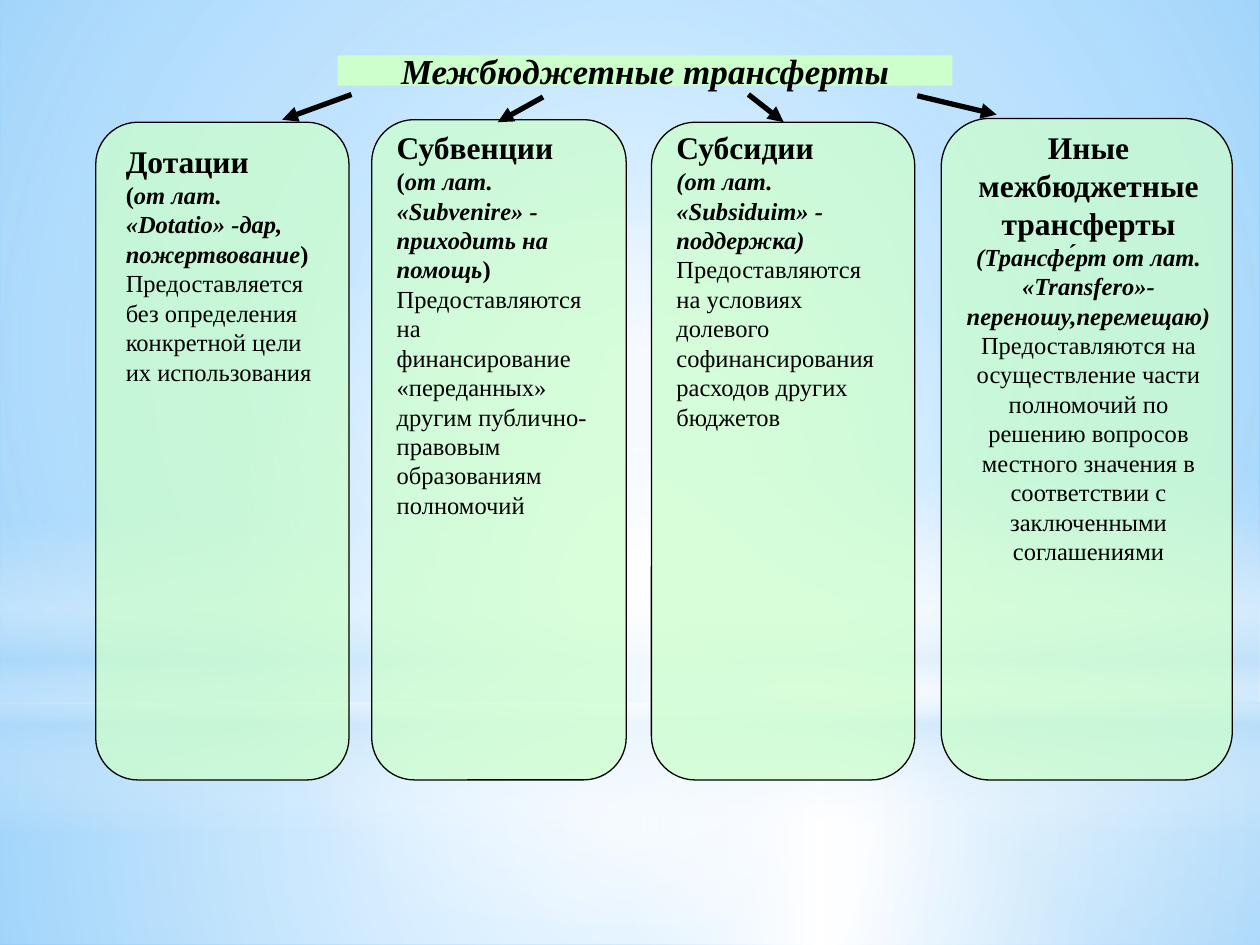
import pptx
import pptx.util
import pptx.dml.color
import pptx.enum.shapes
import pptx.enum.text
import pptx.oxml
import pptx.oxml.ns
import lxml.etree

COLS, ROWS = 100, 75  # grid over the slide
CELL = pptx.util.Inches(0.1)
FACE = "Times New Roman"
INK = {"white": "FFFFFF", "black": "000000", "mint": "CCFFCC", "sky": "9ED5FF",
       "deep": "5BB9FF", "pale": "B4DCFA"}
KIND = pptx.enum.shapes.MSO_SHAPE
ALIGN = pptx.enum.text.PP_ALIGN
qn = pptx.oxml.ns.qn

# Run formats
HEAD = {"size": pptx.util.Pt(18), "bold": True, "italic": False}
TERM = {"size": pptx.util.Pt(14), "bold": True, "italic": True}
MARK = {**TERM, "italic": False}
BODY = {**MARK, "bold": False}
GAP = {**BODY, "size": pptx.util.Pt(9), "name": "Arial"}
TITLE = {**TERM, "size": pptx.util.Pt(20)}

MID = (50, 50, 50, 50)

# Background layers: kind, box, stops (place, colour, opacity), centre or None
LAYERS = [
    (KIND.RECTANGLE, (0, 55.8, COLS, 19.2),
     [(0, "white", 91), (37, "white", 76), (100, "pale", 79)], MID),
    (KIND.RECTANGLE, (0, 0, COLS, 55.8),
     [(0, "white", 89), (48, "white", 62), (100, "pale", 79)], MID),
    (KIND.RECTANGLE, (0, 41.2, COLS, 25),
     [(0, "white", 0), (29, "white", 30), (45, "pale", 40), (55, "white", 26),
      (65, "pale", 60), (100, "white", 0)], None),
    (KIND.OVAL, (0, 17.5, COLS, 55.8), [(0, "white", 100), (56, "white", 0)], MID),
]

# Cards: box, opacity, text box, alignment, paragraphs of runs
CARDS = [
    ((7.6, 9.7, 20.1, 52.2), 74, (9, 10.8, 17.3, 20.5), ALIGN.LEFT, [
        [("Дотации", HEAD)],
        [("(", MARK), ("от лат. «Dotatio» -дар, пожертвование", TERM), (")", MARK)],
        [("Предоставляется без определения конкретной цели их использования", BODY)]]),
    ((29.5, 9.5, 20.2, 52.4), 72, (30.5, 9.7, 18.1, 32.3), ALIGN.LEFT, [
        [("Субвенции", HEAD)],
        [("(", MARK), ("от лат. «Subvenire» - приходить на помощь", TERM), (")", MARK)],
        [("Предоставляются на финансирование «переданных» другим "
          "публично-правовым образованиям полномочий", BODY)]]),
    ((51.7, 9.7, 20.9, 52.2), 74, (52.7, 9.7, 18.9, 25.2), ALIGN.LEFT, [
        [("Субсидии", HEAD)],
        [("(от лат. «Subsiduim» - поддержка)", TERM)],
        [("Предоставляются на условиях долевого софинансирования "
          "расходов других бюджетов", BODY)]]),
    ((74.7, 9.4, 23.1, 52.5), 72, (75.6, 9.7, 21.6, 36), ALIGN.CENTER, [
        [("Иные межбюджетные трансферты", HEAD), (" ", GAP),
         ("(Трансфе́рт от лат. «Transfero»-переношу,перемещаю) ", TERM),
         ("Предоставляются на осуществление части полномочий по решению вопросов "
          "местного значения в соответствии с заключенными соглашениями", BODY)]]),
]

ARROWS = [(27.9, 7.5, 22.4, 9.5), (43.1, 7.7, 39.5, 9.7),
          (59.4, 7.5, 62.2, 9.7), (72.8, 7.6, 79.1, 9.1)]


def grid(box):
    return [round(n * CELL) for n in box]


def tint(name):
    return pptx.dml.color.RGBColor.from_string(INK[name])


def node(top, tag, **attrs):
    part = lxml.etree.SubElement(top, qn(tag))
    for key, val in attrs.items():
        part.set(key, str(val))
    return part


def blend(host, stops, focus, form="circle"):
    """Swap the solid fill in host for a gradient."""
    old = host.find(qn("a:solidFill"))
    grad = pptx.oxml.parse_xml(
        "<a:gradFill %s rotWithShape='1'/>" % pptx.oxml.ns.nsdecls("a"))
    row = node(grad, "a:gsLst")
    for pos, name, alpha in stops:
        clr = node(node(row, "a:gs", pos=pos * 1000), "a:srgbClr", val=INK[name])
        if alpha < 100:
            node(clr, "a:alpha", val=alpha * 1000)
    if focus:
        sides = {side: n * 1000 for side, n in zip("ltrb", focus)}
        node(node(grad, "a:path", path=form), "a:fillToRect", **sides)
    else:
        node(grad, "a:lin", ang=90 * 60000, scaled=0)
    host.replace(old, grad)


def block(slide, kind, box, name, alpha=100, edge=None):
    item = slide.shapes.add_shape(kind, *grid(box))
    item.shadow.inherit = False
    item.fill.solid()
    item.fill.fore_color.rgb = tint(name)
    if alpha < 100:
        clr = item.element.spPr.find(qn("a:solidFill")).find(qn("a:srgbClr"))
        node(clr, "a:alpha", val=alpha * 1000)
    if edge:
        item.line.color.rgb = tint(edge)
        item.line.width = pptx.util.Pt(0.75)
    else:
        item.line.fill.background()
    return item


def write(frame, paras, align):
    for i, runs in enumerate(paras):
        para = frame.paragraphs[0] if i == 0 else frame.add_paragraph()
        para.alignment = align
        for text, style in runs:
            run = para.add_run()
            run.text = text
            run.font.color.rgb = tint("black")
            for key, val in {"name": FACE, **style}.items():
                setattr(run.font, key, val)


def label(slide, box, paras, align):
    frame = slide.shapes.add_textbox(*grid(box)).text_frame
    frame.word_wrap = True
    frame.auto_size = pptx.enum.text.MSO_AUTO_SIZE.SHAPE_TO_FIT_TEXT
    write(frame, paras, align)


def arrow(slide, ends):
    item = slide.shapes.add_connector(
        pptx.enum.shapes.MSO_CONNECTOR.STRAIGHT, *grid(ends))
    item.line.color.rgb = tint("black")
    item.line.width = pptx.util.Pt(3)
    node(item.line._get_or_add_ln(), "a:tailEnd", type="triangle")
    node(item.element.spPr, "a:effectLst")


def main():
    deck = pptx.Presentation()
    deck.slide_width, deck.slide_height = grid((COLS, ROWS))
    slide = deck.slides.add_slide(deck.slide_layouts[6])

    # Background
    slide.background.fill.solid()
    blend(slide.element.find(".//" + qn("p:bgPr")),
          [(0, "sky", 100), (60, "white", 100), (100, "deep", 100)],
          (100, 100, 0, 0), "rect")
    for kind, box, stops, focus in LAYERS:
        blend(block(slide, kind, box, "white").element.spPr, stops, focus)

    # Title bar
    bar = block(slide, KIND.RECTANGLE, (26.8, 4.4, 48.8, 2.4), "mint").text_frame
    bar.word_wrap = False
    bar.vertical_anchor = pptx.enum.text.MSO_ANCHOR.MIDDLE
    write(bar, [[("Межбюджетные трансферты", TITLE)]], ALIGN.CENTER)

    # Cards with their text
    for box, alpha, area, align, paras in CARDS:
        block(slide, KIND.FLOWCHART_ALTERNATE_PROCESS, box, "mint", alpha, "black")
        label(slide, area, paras, align)

    # Arrows from the title to the cards
    for ends in ARROWS:
        arrow(slide, ends)

    deck.save("out.pptx")


if __name__ == "__main__":
    main()
